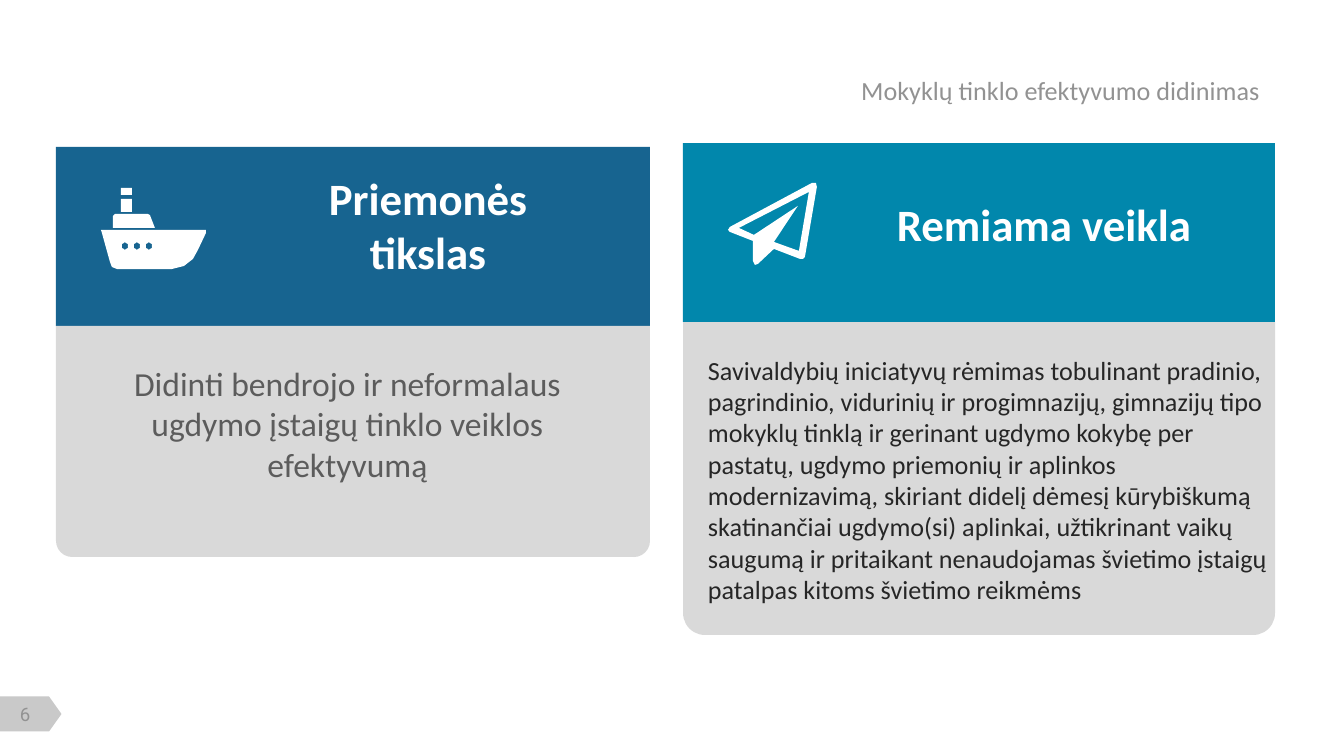
from math import cos, pi, sin

from pptx import Presentation
from pptx.dml.color import RGBColor
from pptx.enum.shapes import MSO_SHAPE
from pptx.enum.text import MSO_ANCHOR, MSO_AUTO_SIZE, PP_ALIGN
from pptx.util import Pt

PX = 914400 / 134.4
LEFT, CENTER, RIGHT = PP_ALIGN.LEFT, PP_ALIGN.CENTER, PP_ALIGN.RIGHT
TOP, MIDDLE = MSO_ANCHOR.TOP, MSO_ANCHOR.MIDDLE
RECTANGLE = MSO_SHAPE.RECTANGLE
ROUND_TOP = MSO_SHAPE.ROUND_2_SAME_RECTANGLE
PAGE_TAG = MSO_SHAPE.FLOWCHART_OFFPAGE_CONNECTOR
COLORS = {
    "white": "FFFFFF", "navy": "176490", "teal": "0187AC", "panel": "D9D9D9",
    "tag": "C9C9C9", "muted": "929292", "goal": "5C5C5C", "activity": "262626",
}
HEADER_HEIGHT = 179
INSETS = (13, 7, 13, 7)

SHIP_HULL = [(101, 230), (206, 230), (206, 233), (198, 250), (193, 259), (184, 266),
             (172, 269), (117, 269), (112, 267), (110, 262), (102, 233)]
SHIP_CABIN = [(113, 228), (113, 216), (115, 214), (148, 214), (150, 215), (155, 228)]
SHIP_FUNNEL = [(121, 199), (132, 199), (132, 212), (121, 212)]
SHIP_SMOKE = [(121, 188), (132, 188), (132, 195), (121, 195)]
PLANE_OUTLINE = [(817, 187), (805, 257), (803, 259), (800, 259), (774, 249),
                 (758, 264), (755, 265), (753, 261), (753, 241), (730, 232),
                 (728, 230), (730, 227), (812, 183), (816, 183)]
PLANE_OPENING = [(809, 192), (739, 228), (754, 235), (798, 206), (774, 242), (799, 251)]


def px(*lengths):
    return [round(length * PX) for length in lengths]


def color(name):
    return RGBColor.from_string(COLORS[name])


def paint(shape, fill):
    shape.shadow.inherit = False
    shape.fill.solid()
    shape.fill.fore_color.rgb = color(fill)
    shape.line.fill.background()


def add_block(slide, kind, box, fill, rotation=0):
    block = slide.shapes.add_shape(kind, *px(*box))
    block.rotation = rotation
    paint(block, fill)
    return block


def add_icon(slide, contours):
    """Draw closed contours as one shape; an inner contour becomes a hole."""
    builder = slide.shapes.build_freeform(*contours[0][0], scale=PX)
    builder.add_line_segments(contours[0][1:])
    for contour in contours[1:]:
        builder.move_to(*contour[0])
        builder.add_line_segments(contour[1:])
    paint(builder.convert_to_shape(), "white")


def porthole(x, y, steps=12):
    angles = [2 * pi * step / steps for step in range(steps)]
    return [(x + 3 * cos(angle), y + 4 * sin(angle)) for angle in angles]


def write(shape, text, size, ink, align, anchor=TOP, bold=False, font="Calibri",
          insets=INSETS):
    frame = shape.text_frame
    frame.text = text
    frame.word_wrap = True
    frame.auto_size = MSO_AUTO_SIZE.NONE
    frame.vertical_anchor = anchor
    (frame.margin_left, frame.margin_top,
     frame.margin_right, frame.margin_bottom) = px(*insets)
    for paragraph in frame.paragraphs:
        paragraph.alignment = align
        paragraph.font.name = font
        paragraph.font.size = Pt(size)
        paragraph.font.bold = bold
        paragraph.font.color.rgb = color(ink)


def add_text(slide, box, *style, **options):
    write(slide.shapes.add_textbox(*px(*box)), *style, **options)


def add_card(slide, left, top, width, panel_height, fill):
    """Draw a coloured header above a panel with rounded lower corners."""
    add_block(slide, RECTANGLE, (left, top, width, HEADER_HEIGHT), fill)
    panel = add_block(slide, ROUND_TOP,
                      (left, top + HEADER_HEIGHT, width, panel_height), "panel", 180)
    panel.adjustments[0] = 0.07
    panel.adjustments[1] = 0


def set_title(slide, text):
    title = slide.shapes.title
    title.left, title.top, title.width, title.height = px(56, 64, 1217, 52)
    write(title, text, 14, "muted", RIGHT, MIDDLE)


def add_page_number(slide, number):
    add_block(slide, PAGE_TAG, (13, 683, 35, 62), "tag", 270)
    add_text(slide, (3, 703, 44, 23), number, 10, "muted", CENTER, MIDDLE,
             font="Roboto", insets=(0, 0, 0, 0))


def main():
    presentation = Presentation()
    presentation.slide_width, presentation.slide_height = px(1344, 756)
    slide = presentation.slides.add_slide(presentation.slide_layouts[5])

    add_page_number(slide, "6")
    set_title(slide, "Mokyklų tinklo efektyvumo didinimas")

    add_card(slide, 56, 147, 594, 231, "navy")
    portholes = [porthole(x, 246) for x in (125, 137, 149)]
    add_icon(slide, [SHIP_HULL, SHIP_CABIN, SHIP_FUNNEL, SHIP_SMOKE, *portholes])
    add_text(slide, (260, 164, 336, 122), "Priemonės tikslas", 24, "white", CENTER,
             bold=True)
    add_text(slide, (101, 356, 493, 136),
             "Didinti bendrojo ir neformalaus ugdymo įstaigų tinklo veiklos efektyvumą",
             18, "goal", CENTER)

    add_card(slide, 683, 143, 592, 313, "teal")
    add_icon(slide, [PLANE_OUTLINE, PLANE_OPENING])
    add_text(slide, (876, 190, 336, 67), "Remiama veikla", 24, "white", CENTER,
             bold=True)
    add_text(slide, (695, 347, 587, 267),
             "Savivaldybių iniciatyvų rėmimas tobulinant pradinio, pagrindinio, "
             "vidurinių ir progimnazijų, gimnazijų tipo mokyklų tinklą ir gerinant "
             "ugdymo kokybę per\n"
             "pastatų, ugdymo priemonių ir aplinkos modernizavimą, skiriant didelį "
             "dėmesį kūrybiškumą skatinančiai ugdymo(si) aplinkai, užtikrinant vaikų "
             "saugumą ir pritaikant nenaudojamas švietimo įstaigų patalpas kitoms "
             "švietimo reikmėms",
             14, "activity", LEFT)

    presentation.save("out.pptx")


if __name__ == "__main__":
    main()
